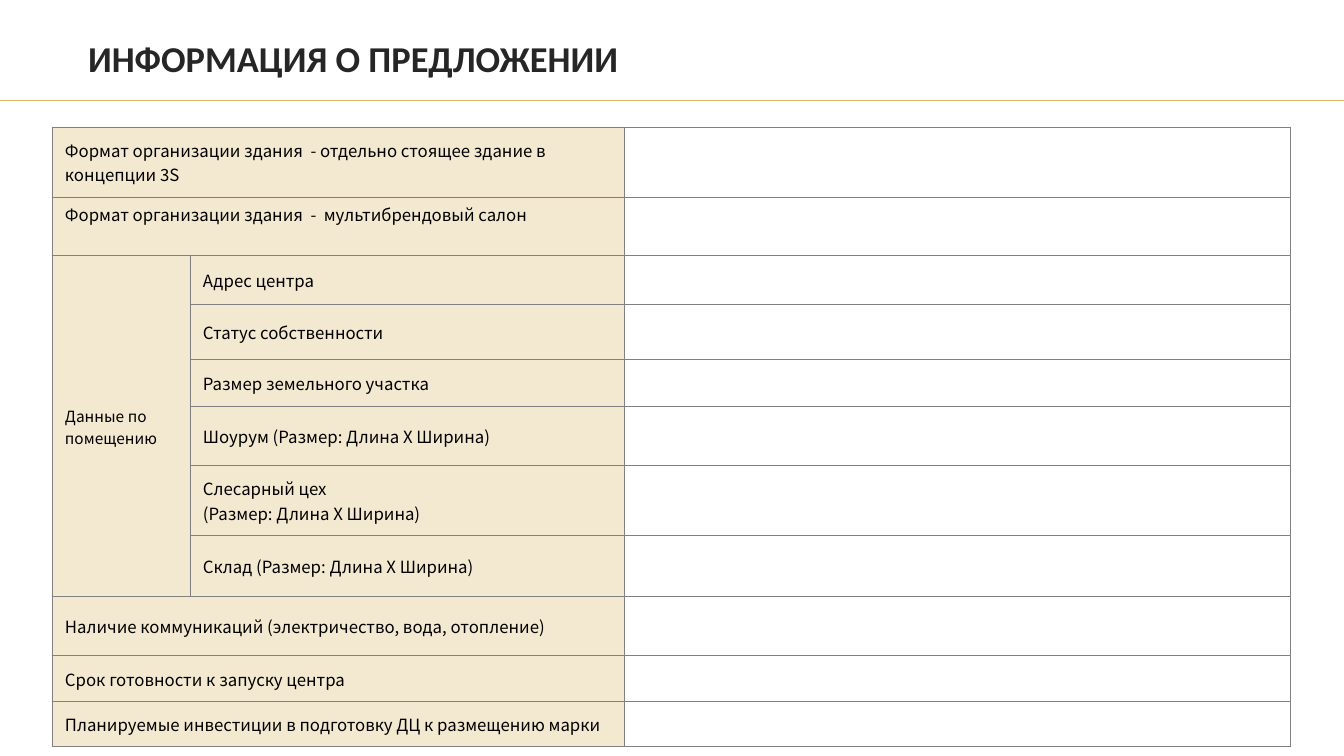
import dataclasses
import typing

import lxml.etree
import pptx
import pptx.dml.color
import pptx.enum.shapes
import pptx.enum.text
import pptx.oxml
import pptx.oxml.ns
import pptx.util

EMU_PER_PX = 914400 / 100.8
SLIDE_WIDTH, SLIDE_HEIGHT = 1344, 756
RULE_Y = 100
TABLE_LEFT, TABLE_TOP = 52, 127
COLUMN_WIDTHS = (138, 434, 667)
GROUP_FIRST_ROW, GROUP_LAST_ROW = 2, 7
GOLD, GRAY, INK, BLACK = "DAB965", "808080", "262626", "000000"
LABEL_OPACITY = 30
TABLE_FONT = "Noto Sans CJK SC"
MIDDLE = pptx.enum.text.MSO_ANCHOR.MIDDLE
TOP = pptx.enum.text.MSO_ANCHOR.TOP


@dataclasses.dataclass(frozen=True)
class FormRow:
    label: str
    height: int
    anchor: pptx.enum.text.MSO_ANCHOR = MIDDLE


FORM_ROWS = (
    FormRow("Формат организации здания  - отдельно стоящее здание в концепции 3S", 70),
    FormRow("Формат организации здания  -  мультибрендовый салон", 59, TOP),
    FormRow("Адрес центра", 49),
    FormRow("Статус собственности", 55),
    FormRow("Размер земельного участка", 47),
    FormRow("Шоурум (Размер: Длина Х Ширина)", 59),
    FormRow("Слесарный цех\v(Размер: Длина Х Ширина)", 70),
    FormRow("Склад (Размер: Длина Х Ширина)", 61),
    FormRow("Наличие коммуникаций (электричество, вода, отопление)", 59),
    FormRow("Срок готовности к запуску центра", 46),
    FormRow("Планируемые инвестиции в подготовку ДЦ к размещению марки", 45),
)


def px(length: int) -> pptx.util.Emu:
    return pptx.util.Emu(round(length * EMU_PER_PX))


def color(value: str) -> pptx.dml.color.RGBColor:
    return pptx.dml.color.RGBColor.from_string(value)


def apply(target: typing.Any, values: dict[str, typing.Any]) -> None:
    """Set every named attribute on the target."""
    for name, value in values.items():
        setattr(target, name, value)


def add_title(slide: typing.Any, text: str) -> None:
    title = slide.shapes.title
    apply(title, {"left": px(78), "top": px(30), "width": px(1228), "height": px(62)})
    title.text_frame.text = text
    title.text_frame.vertical_anchor = MIDDLE
    paragraph = title.text_frame.paragraphs[0]
    apply(paragraph, {"alignment": pptx.enum.text.PP_ALIGN.LEFT, "line_spacing": 0.9})
    font = paragraph.runs[0].font
    apply(font, {"name": "Calibri", "size": pptx.util.Pt(26), "bold": True})
    font.color.rgb = color(INK)


def add_rule(slide: typing.Any) -> None:
    rule = slide.shapes.add_connector(
        pptx.enum.shapes.MSO_CONNECTOR.STRAIGHT, 0, px(RULE_Y), px(SLIDE_WIDTH), px(RULE_Y)
    )
    rule.line.color.rgb = color(GOLD)
    rule.line.width = pptx.util.Pt(0.5)
    lxml.etree.SubElement(rule._element.spPr, pptx.oxml.ns.qn("a:effectLst"))


def add_borders(cell: typing.Any) -> None:
    properties = cell._tc.get_or_add_tcPr()
    for position, side in enumerate(("lnL", "lnR", "lnT", "lnB")):
        border = pptx.oxml.parse_xml(
            f'<a:{side} {pptx.oxml.ns.nsdecls("a")} w="{pptx.util.Pt(0.75)}">'
            f'<a:solidFill><a:srgbClr val="{GRAY}"/></a:solidFill></a:{side}>'
        )
        properties.insert(position, border)


def fill_label(cell: typing.Any) -> None:
    cell.fill.solid()
    cell.fill.fore_color.rgb = color(GOLD)
    tint = cell._tc.tcPr.find(".//" + pptx.oxml.ns.qn("a:srgbClr"))
    alpha = lxml.etree.SubElement(tint, pptx.oxml.ns.qn("a:alpha"))
    alpha.set("val", str(LABEL_OPACITY * 1000))


def write_label(cell: typing.Any, text: str, size: int, anchor: typing.Any = MIDDLE) -> None:
    cell.text = text
    apply(cell, {"vertical_anchor": anchor, "margin_left": px(13), "margin_right": px(13),
                 "margin_top": px(5), "margin_bottom": px(5)})
    for run in cell.text_frame.paragraphs[0].runs:
        apply(run.font, {"name": TABLE_FONT, "size": pptx.util.Pt(size)})
        run.font.color.rgb = color(BLACK)


def add_form(slide: typing.Any) -> None:
    table = slide.shapes.add_table(
        len(FORM_ROWS), len(COLUMN_WIDTHS), px(TABLE_LEFT), px(TABLE_TOP),
        px(sum(COLUMN_WIDTHS)), px(sum(row.height for row in FORM_ROWS)),
    ).table
    apply(table, {"first_row": False, "horz_banding": False})
    for column, width in zip(table.columns, COLUMN_WIDTHS):
        column.width = px(width)

    for index, row in enumerate(FORM_ROWS):
        table.rows[index].height = px(row.height)
        group, label, answer = table.rows[index].cells
        for cell in (group, label):
            fill_label(cell)
        answer.fill.background()
        for cell in (group, label, answer):
            add_borders(cell)
        if not GROUP_FIRST_ROW <= index <= GROUP_LAST_ROW:
            group.merge(label)
            label = group
        write_label(label, row.label, 12, row.anchor)

    group = table.cell(GROUP_FIRST_ROW, 0)
    group.merge(table.cell(GROUP_LAST_ROW, 0))
    write_label(group, "Данные по помещению", 11)


def main() -> None:
    presentation = pptx.Presentation()
    apply(presentation, {"slide_width": px(SLIDE_WIDTH), "slide_height": px(SLIDE_HEIGHT)})
    slide = presentation.slides.add_slide(presentation.slide_layouts.get_by_name("Title Only"))
    add_rule(slide)
    add_title(slide, "ИНФОРМАЦИЯ О ПРЕДЛОЖЕНИИ")
    add_form(slide)
    presentation.save("out.pptx")


if __name__ == "__main__":
    main()
